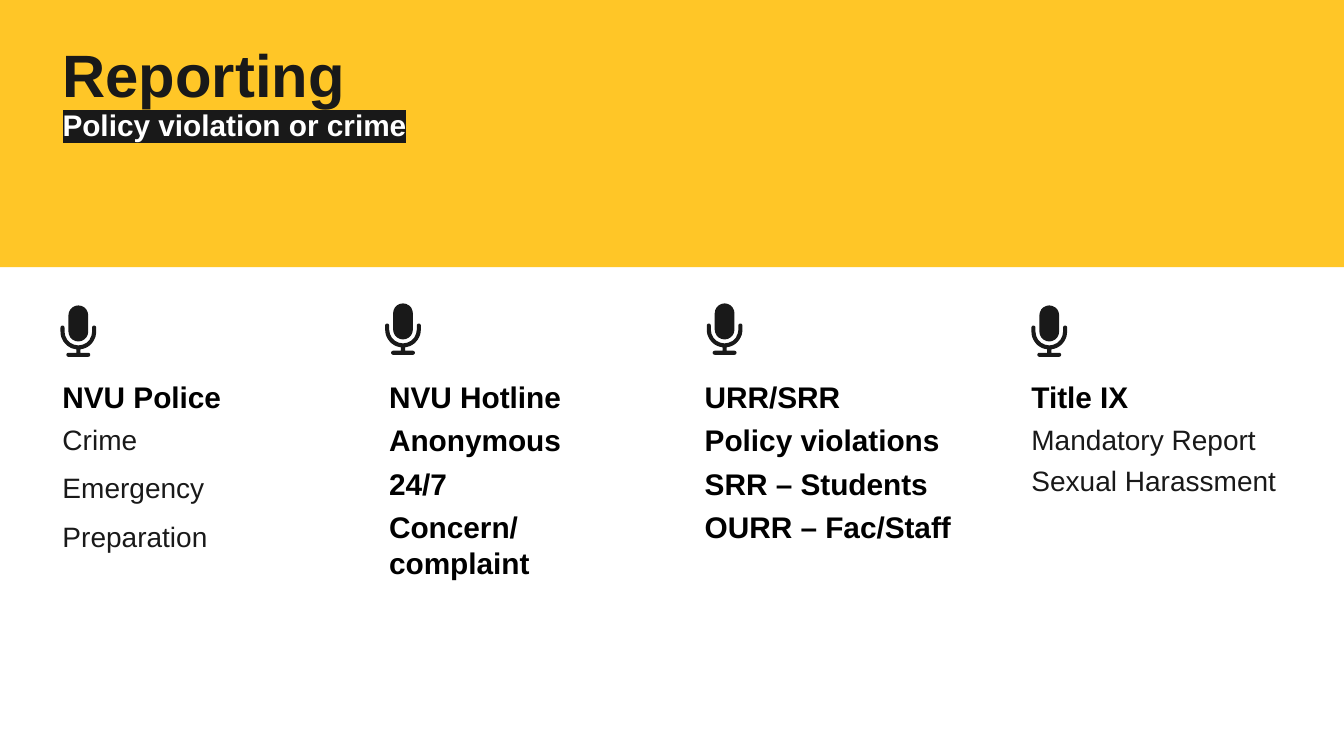
import math
import lxml.etree
import pptx
import pptx.dml.color
import pptx.enum.shapes
import pptx.enum.text
import pptx.oxml.ns
import pptx.util

WIDE, HIGH = 13.33, 7.5
GOLD, INK, BLACK, WHITE = "FFC627", "191919", "000000", "FFFFFF"
HEAD, BODY = 21.3, 20

# Text left, icon left, icon top, heading, lines, plain lines?, space after
COLS = [
    (0.62, 0.60, 3.03, "NVU Police",
     ["Crime", "Emergency", "Preparation"], True, 5.3),
    (3.86, 3.82, 3.01, "NVU Hotline",
     ["Anonymous", "24/7", "Concern/complaint"], False, 0),
    (6.99, 7.01, 3.01, "URR/SRR",
     ["Policy violations", "SRR – Students", "OURR – Fac/Staff"], False, 0),
    (10.23, 10.23, 3.03, "Title IX",
     ["Mandatory Report", "Sexual Harassment"], True, 0),
]


def inch(num):
    return pptx.util.Inches(num)


def paint(color, code):
    color.rgb = pptx.dml.color.RGBColor.from_string(code)


def fill(shape, code):
    shape.shadow.inherit = False
    shape.fill.solid()
    paint(shape.fill.fore_color, code)
    shape.line.fill.background()


def frame(slide, box):
    text = slide.shapes.add_textbox(*map(inch, box)).text_frame
    text.word_wrap = True
    text.margin_left = text.margin_right = 0
    text.margin_top = text.margin_bottom = 0
    text.vertical_anchor = pptx.enum.text.MSO_ANCHOR.TOP
    return text


def write(para, words, size, code, bold=True):
    run = para.add_run()
    run.text = words
    font = para.font
    font.name, font.size, font.bold = "Arial", pptx.util.Pt(size), bold
    paint(font.color, code)
    return run


def mark(run, code):
    """Put a highlight behind a run."""
    name = pptx.oxml.ns.qn
    light = lxml.etree.SubElement(run._r.get_or_add_rPr(), name("a:highlight"))
    lxml.etree.SubElement(light, name("a:srgbClr")).set("val", code)


def banner(slide, box):
    left, top, width, height = box
    band = slide.shapes.add_shape(
        pptx.enum.shapes.MSO_SHAPE.RECTANGLE, *map(inch, box))
    fill(band, GOLD)
    for words, y, tall, size, code, back in [
            ("Reporting", 0.46, 0.8, 42.7, INK, GOLD),
            ("Policy violation or crime", 1.1, 0.48, HEAD, WHITE, INK)]:
        text = frame(slide, (left + 0.62, top + y, width - 1.12, tall))
        para = text.paragraphs[0]
        para.line_spacing = 0.9
        para.space_after = pptx.util.Pt(10.7)
        mark(write(para, words, size, code), back)


def arc(x, y, r, start, end, steps=10):
    """Points on an arc, with angles running clockwise from the right."""
    turns = [math.radians(start + (end - start) * i / steps)
             for i in range(steps + 1)]
    return [(x + r * math.cos(t), y + r * math.sin(t)) for t in turns]


def mic(slide, left, top):
    # Lengths are thousandths of an inch
    mid, low, foot = 177, 260, 490
    head = arc(mid, 98, 98, 180, 360) + arc(mid, low, 98, 0, 180)
    stand = (arc(20, 220, 20, 180, 360)          # left tip
             + arc(mid, low, 137, 180, 0)        # inner curve
             + arc(334, 220, 20, 180, 360)       # right tip
             + arc(mid, low, 177, 0, 83.5)       # outer curve, right
             + [(mid + 20, foot - 20)]
             + arc(275, foot, 20, -90, 90)       # base
             + arc(79, foot, 20, 90, 270)
             + [(mid - 20, foot - 20)]
             + arc(mid, low, 177, 96.5, 180))    # outer curve, left
    pen = slide.shapes.build_freeform(*head[0], scale=914.4)
    pen.add_line_segments(head[1:], close=True)
    pen.move_to(*stand[0])
    pen.add_line_segments(stand[1:], close=True)
    fill(pen.convert_to_shape(inch(left), inch(top)), INK)


def column(slide, box, title, lines, plain, after):
    text = frame(slide, box)
    write(text.paragraphs[0], title, HEAD, BLACK)
    for line in lines:
        para = text.add_paragraph()
        para.space_before = pptx.util.Pt(5.3)
        para.space_after = pptx.util.Pt(after)
        if plain:
            write(para, line, BODY, INK, False)
        else:
            write(para, line, HEAD, BLACK)


def main():
    deck = pptx.Presentation()
    deck.slide_width, deck.slide_height = inch(WIDE), inch(HIGH)
    slide = deck.slides.add_slide(deck.slide_layouts[6])
    banner(slide, (0, 0, WIDE, 2.65))
    for left, x, y, title, lines, plain, after in COLS:
        mic(slide, x, y)
        column(slide, (left, HIGH / 2 + 0.01, 2.6, 3.28),
               title, lines, plain, after)
    deck.save("out.pptx")


if __name__ == "__main__":
    main()
